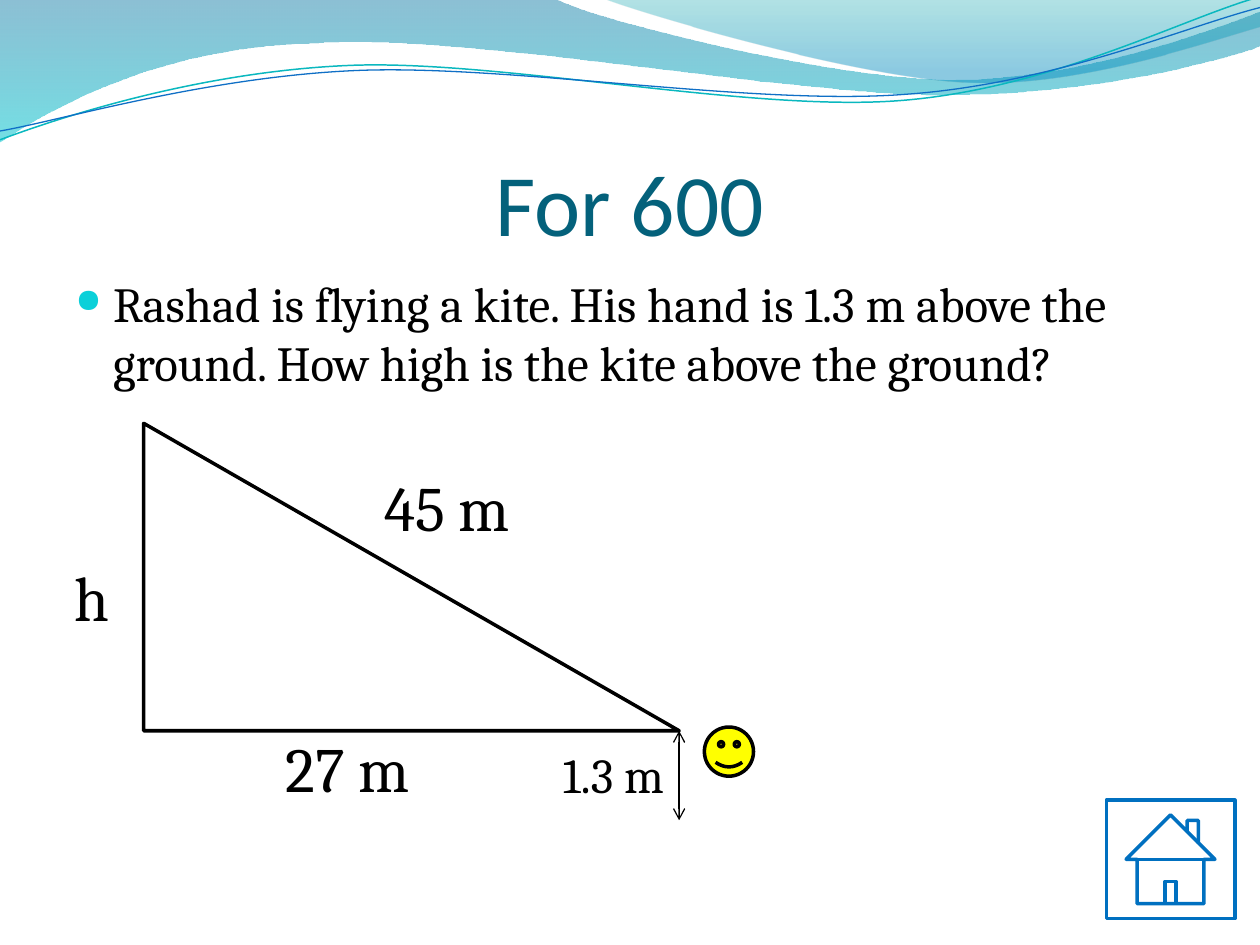
import pptx
import pptx.dml.color
import pptx.enum.shapes
import pptx.enum.text
import pptx.oxml
import pptx.oxml.ns
import pptx.util

Inches = pptx.util.Inches
Pt = pptx.util.Pt
RGBColor = pptx.dml.color.RGBColor
MSO_SHAPE = pptx.enum.shapes.MSO_SHAPE
qn = pptx.oxml.ns.qn

BLACK = RGBColor(0x00, 0x00, 0x00)
YELLOW = RGBColor(0xFF, 0xFF, 0x00)
BUTTON_BLUE = RGBColor(0x00, 0x70, 0xC0)
TITLE_TEAL = RGBColor(0x04, 0x61, 0x7B)
WAVE_BLUE = RGBColor(0x00, 0x74, 0xA1)
WAVE_CYAN = RGBColor(0x00, 0xC6, 0xCF)
CREST_TEAL = RGBColor(0x00, 0xA1, 0xA9)
CREST_BLUE = RGBColor(0x00, 0x8B, 0xBF)
STRAND_TEAL = RGBColor(0x0A, 0xB8, 0xBF)
STRAND_BLUE = RGBColor(0x0F, 0x6F, 0xC6)

BULLET_XML = (
    '<a:buClr %s><a:srgbClr val="0BD0D9"/></a:buClr>',
    '<a:buSzPct %s val="68000"/>',
    '<a:buChar %s char="●"/>',
)

# Two numbers are a straight step, six are a Bezier curve (two controls, end).
WAVE = [(0, 0), (4.4, -0.01),
        (4.76, 0.17, 6.64, 0.63, 7.58, 0.63),
        (8.53, 0.63, 9.58, 0.26, 10, 0.09),
        (10.01, 0.36),
        (9.83, 0.44, 8.7, 0.76, 7.46, 0.75),
        (6.22, 0.75, 3.82, 0.28, 2.57, 0.34),
        (1.29, 0.36, 0.46, 0.83, -0.01, 1.13)]
CREST = [(4.79, -0.01),
         (5.09, 0.11, 6.82, 0.62, 7.69, 0.65),
         (8.56, 0.69, 9.61, 0.32, 10, 0.21),
         (10, 0)]
TEAL_STRAND = [(0, 1.11),
               (0.48, 0.93, 1.58, 0.57, 2.77, 0.52),
               (3.95, 0.47, 5.93, 0.89, 7.13, 0.8),
               (8.33, 0.71, 9.38, 0.15, 9.98, -0.02)]
BLUE_STRAND = [(0, 1.04),
               (0.47, 0.96, 1.64, 0.61, 2.83, 0.56),
               (4.03, 0.51, 5.97, 0.84, 7.17, 0.75),
               (8.36, 0.67, 9.41, 0.21, 10, 0.06)]


def add_outline(slide, steps, close):
    """Build a polygon through all points, then merge each curve's three lines."""
    points = [(Inches(step[i]), Inches(step[i + 1]))
              for step in steps for i in range(0, len(step), 2)]
    builder = slide.shapes.build_freeform(*points[0])
    builder.add_line_segments(points[1:], close=close)
    sp = builder.convert_to_shape()
    sp.shadow.inherit = False
    lines = iter(list(sp._element.spPr.iter(qn("a:lnTo"))))
    for step in steps[1:]:
        first = next(lines)
        if len(step) == 6:
            curve = pptx.oxml.parse_xml(
                "<a:cubicBezTo %s/>" % pptx.oxml.ns.nsdecls("a"))
            first.addprevious(curve)
            for line in (first, next(lines), next(lines)):
                curve.append(line[0])
                line.getparent().remove(line)
    return sp


def add_wave(slide, steps, stops):
    """Add a top-down gradient area; stops are (position, colour, opacity in %)."""
    sp = add_outline(slide, steps, True)
    sp.line.fill.background()
    sp.fill.gradient()
    sp.fill.gradient_angle = 270
    for stop, (position, color, _) in zip(sp.fill.gradient_stops, stops):
        stop.position = position
        stop.color.rgb = color
    colors = sp._element.spPr.iter(qn("a:srgbClr"))
    for clr, (_, _, opacity) in zip(list(colors), stops):
        alpha = pptx.oxml.parse_xml("<a:alpha %s/>" % pptx.oxml.ns.nsdecls("a"))
        alpha.set("val", str(opacity * 1000))
        clr.append(alpha)


def add_strand(slide, steps, color, width):
    sp = add_outline(slide, steps, False)
    sp.fill.background()
    sp.line.color.rgb = color
    sp.line.width = Pt(width)


def add_figure(slide, kind, box, color, fill=None):
    sp = slide.shapes.add_shape(kind, *map(Inches, box))
    sp.shadow.inherit = False
    if fill is None:
        sp.fill.background()
    else:
        sp.fill.solid()
        sp.fill.fore_color.rgb = fill
    sp.line.color.rgb = color
    sp.line.width = Pt(2)


def add_double_arrow(slide, x, top, bottom):
    line = slide.shapes.add_connector(
        pptx.enum.shapes.MSO_CONNECTOR.STRAIGHT,
        Inches(x), Inches(top), Inches(x), Inches(bottom))
    line.line.color.rgb = BLACK
    line.line.width = Pt(0.75)
    ln = line.line._get_or_add_ln()
    for end in ("a:headEnd", "a:tailEnd"):
        ln.append(pptx.oxml.parse_xml(
            '<%s %s type="arrow"/>' % (end, pptx.oxml.ns.nsdecls("a"))))
    line._element.spPr.append(pptx.oxml.parse_xml(
        "<a:effectLst %s/>" % pptx.oxml.ns.nsdecls("a")))


def style_run(p, size, font, color):
    r = p.runs[0]
    r.font.size = Pt(size)
    r.font.name = font
    r.font.color.rgb = color


def add_text(slide, text, box, size):
    sp = slide.shapes.add_textbox(*map(Inches, box))
    tf = sp.text_frame
    tf.word_wrap = True
    tf.text = text
    style_run(tf.paragraphs[0], size, "Cambria", BLACK)
    return tf


def add_label(slide, text, box, size=36):
    tf = add_text(slide, text, box, size)
    tf.auto_size = pptx.enum.text.MSO_AUTO_SIZE.SHAPE_TO_FIT_TEXT


def add_question(slide, text, box):
    p = add_text(slide, text, box, 28).paragraphs[0]
    p.space_before = Pt(5)
    pPr = p._p.get_or_add_pPr()
    pPr.set("marL", str(Inches(0.3)))
    pPr.set("indent", str(Inches(-0.3)))
    for xml in BULLET_XML:
        pPr.append(pptx.oxml.parse_xml(xml % pptx.oxml.ns.nsdecls("a")))


def set_title(slide, text):
    sp = slide.shapes.title
    sp.left, sp.top, sp.width, sp.height = map(Inches, (0.5, 0.77, 9, 1.25))
    tf = sp.text_frame
    tf.text = text
    tf.vertical_anchor = pptx.enum.text.MSO_ANCHOR.BOTTOM
    tf.margin_left = tf.margin_right = tf.margin_bottom = 0
    tf.margin_top = Inches(0.05)
    p = tf.paragraphs[0]
    p.alignment = pptx.enum.text.PP_ALIGN.CENTER
    style_run(p, 50, "Calibri", TITLE_TEAL)


def main():
    prs = pptx.Presentation()
    prs.slide_width, prs.slide_height = Inches(10), Inches(7.5)
    slide = prs.slides.add_slide(prs.slide_layouts[5])

    add_wave(slide, WAVE, [(0, WAVE_BLUE, 45), (1, WAVE_CYAN, 55)])
    add_wave(slide, CREST, [(0, CREST_TEAL, 30), (0.8, CREST_BLUE, 45)])
    add_strand(slide, TEAL_STRAND, STRAND_TEAL, 0.85)
    add_strand(slide, BLUE_STRAND, STRAND_BLUE, 0.75)

    set_title(slide, "For 600")
    add_question(slide, "Rashad is flying a kite. His hand is 1.3 m above the ground. "
                 "How high is the kite above the ground?", (0.5, 2.12, 9, 4.8))

    add_figure(slide, MSO_SHAPE.ACTION_BUTTON_HOME, (8.78, 6.35, 1.02, 0.94), BUTTON_BLUE)
    add_figure(slide, MSO_SHAPE.RIGHT_TRIANGLE, (1.14, 3.36, 4.25, 2.44), BLACK)
    add_figure(slide, MSO_SHAPE.SMILEY_FACE, (5.59, 5.77, 0.39, 0.39), BLACK, YELLOW)
    add_double_arrow(slide, 5.39, 5.8, 6.51)

    add_label(slide, "1.3 m", (4.37, 5.86, 1.73, 0.57), 28)
    add_label(slide, "h", (0.49, 4.38, 1.3, 0.71))
    add_label(slide, "27 m", (2.17, 5.74, 1.3, 0.71))
    add_label(slide, "45 m", (2.95, 3.67, 2.28, 0.71))
    prs.save("out.pptx")


if __name__ == "__main__":
    main()
